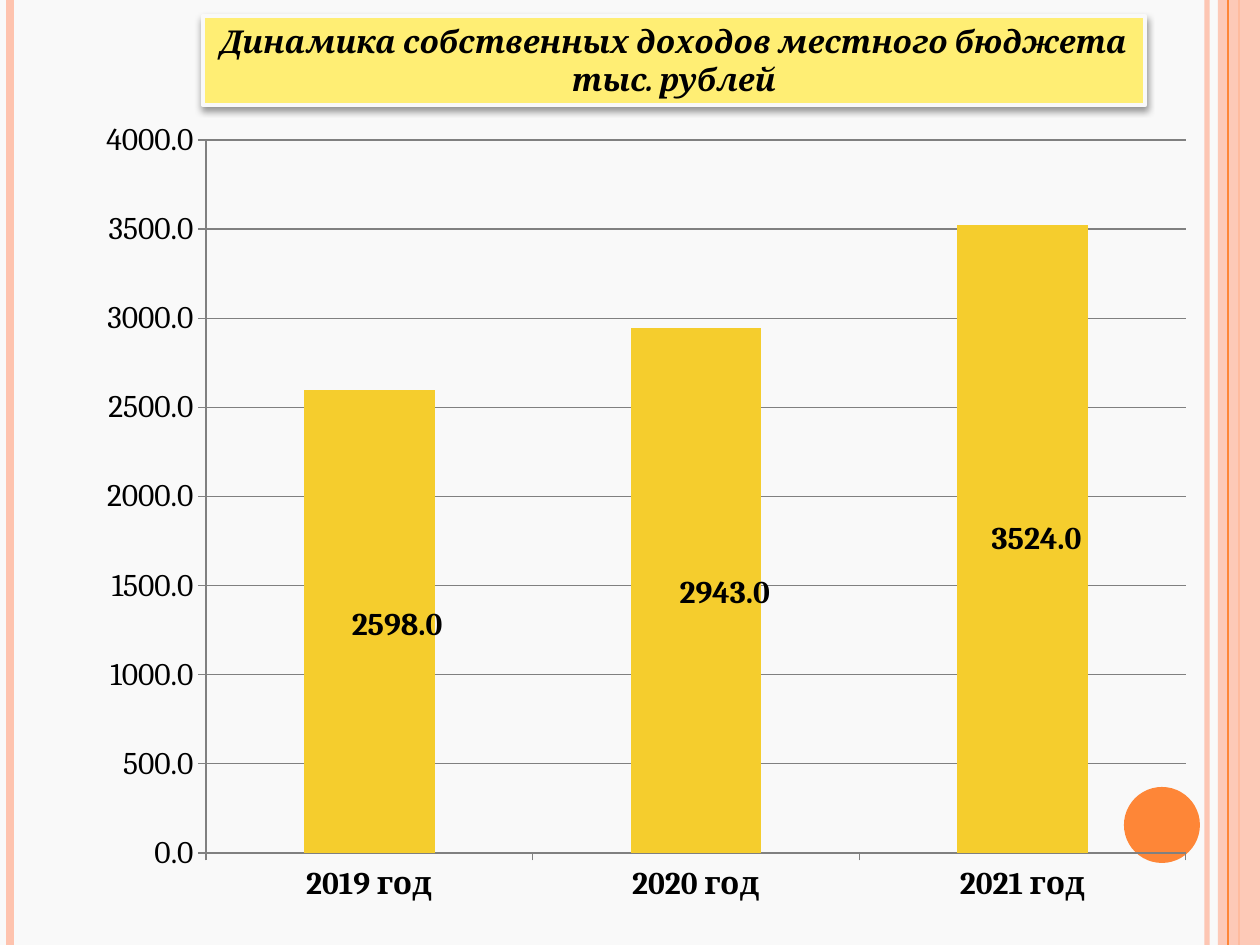
from pptx import Presentation
from pptx.chart.data import CategoryChartData
from pptx.dml.color import RGBColor
from pptx.enum.chart import XL_CHART_TYPE, XL_LABEL_POSITION, XL_TICK_MARK
from pptx.enum.shapes import MSO_CONNECTOR, MSO_SHAPE
from pptx.enum.text import MSO_ANCHOR, MSO_AUTO_SIZE, PP_ALIGN
from pptx.oxml import parse_xml
from pptx.oxml.ns import nsdecls, qn
from pptx.util import Pt
from lxml.etree import SubElement

THEME = dict(back="F9F9F9", pale="FEC3AE", orange="FE8637", title="FFEE74",
             bar="F5CD2D", grid="808080", ink="000000", font="Cambria", size=18)
TITLE = "Динамика собственных доходов местного бюджета тыс. рублей"
DATA = [("2019 год", 2598, (28, 4)), ("2020 год", 2943, (29, 2)),
        ("2021 год", 3524, (14, 0))]
WIDE, HIGH = 1260, 945
RULES = [(1207, "pale", 3, 93), (10, "pale", 4.5, 100), (1239, "orange", 1.5, 100)]
EDGE = (1228, "orange", 0.75, 100)
CHART = (84, 106, 1124, 814)
PLOT = (206, 140, 980, 713)


def px(n):
    return round(n * 914400 / 126)


def color(name):
    return RGBColor.from_string(THEME[name])


def fade(fill, share):
    tint = fill.find(".//" + qn("a:srgbClr"))
    SubElement(tint, qn("a:alpha")).set("val", str(share * 1000))


def rule(slide, x, tone, width, share):
    line = slide.shapes.add_connector(MSO_CONNECTOR.STRAIGHT, px(x), 0, px(x), px(HIGH))
    line.line.color.rgb = color(tone)
    line.line.width = Pt(width)
    props = line._element.spPr
    if share < 100:
        fade(props, share)
    SubElement(props, qn("a:effectLst"))


def block(slide, kind, box, tone):
    shape = slide.shapes.add_shape(kind, *map(px, box))
    shape.shadow.inherit = False
    shape.fill.solid()
    shape.fill.fore_color.rgb = color(tone)
    shape.line.fill.background()
    return shape


def style(font, bold=False):
    font.name = THEME["font"]
    font.size = Pt(THEME["size"])
    font.bold = bold
    font.color.rgb = color("ink")


def layout(inner="", **parts):
    tags = "".join(f'<c:{k} val="{v:.4f}"/>' for k, v in parts.items())
    return parse_xml(f'<c:layout {nsdecls("c")}><c:manualLayout>{inner}{tags}'
                     '</c:manualLayout></c:layout>')


def add_title(slide):
    box = block(slide, MSO_SHAPE.RECTANGLE, (203, 16, 942, 89), "title")
    box.line.color.rgb = color("back")
    box.line.width = Pt(2.75)
    glow = SubElement(box._element.spPr.find(qn("a:effectLst")), qn("a:outerShdw"),
                      blurRad=str(Pt(4)), dist=str(Pt(2)), dir="5400000", rotWithShape="0")
    tint = SubElement(glow, qn("a:srgbClr"), val=THEME["ink"])
    SubElement(tint, qn("a:alpha"), val="40000")
    frame = box.text_frame
    frame.text = TITLE
    frame.word_wrap = True
    frame.auto_size = MSO_AUTO_SIZE.SHAPE_TO_FIT_TEXT
    frame.vertical_anchor = MSO_ANCHOR.TOP
    para = frame.paragraphs[0]
    para.alignment = PP_ALIGN.CENTER
    style(para.runs[0].font, True)
    para.runs[0].font.italic = True


def add_bars(slide):
    data = CategoryChartData(number_format="0.0")
    data.categories = [name for name, _, _ in DATA]
    data.add_series("Series 1", [value for _, value, _ in DATA])
    chart = slide.shapes.add_chart(XL_CHART_TYPE.COLUMN_STACKED, *map(px, CHART), data).chart
    style(chart.font)
    chart.has_legend = False
    chart.has_title = False
    left, top, wide, high = CHART
    area = chart._chartSpace.chart.plotArea
    for old in area.findall(qn("c:layout")):
        area.remove(old)
    modes = '<c:layoutTarget val="inner"/><c:xMode val="edge"/><c:yMode val="edge"/>'
    area.insert(0, layout(modes, x=(PLOT[0] - left) / wide, y=(PLOT[1] - top) / high,
                          w=PLOT[2] / wide, h=PLOT[3] / high))
    for axis, bold in ((chart.category_axis, True), (chart.value_axis, False)):
        axis.major_tick_mark = XL_TICK_MARK.OUTSIDE
        axis.minor_tick_mark = XL_TICK_MARK.NONE
        axis.format.line.color.rgb = color("grid")
        style(axis.tick_labels.font, bold)
    scale = chart.value_axis
    scale.minimum_scale, scale.maximum_scale, scale.major_unit = 0, 4000, 500
    scale.tick_labels.number_format = "0.0"
    scale.tick_labels.number_format_is_linked = False
    scale.has_major_gridlines = True
    scale.major_gridlines.format.line.color.rgb = color("grid")
    plot = chart.plots[0]
    plot.gap_width, plot.overlap, plot.vary_by_categories = 150, 100, False
    bars = plot.series[0]
    bars.format.fill.solid()
    bars.format.fill.fore_color.rgb = color("bar")
    labels = bars.data_labels
    labels.show_value = True
    labels.number_format = "0.0"
    labels.number_format_is_linked = False
    style(labels.font, True)
    for i, (_, _, (dx, dy)) in enumerate(DATA):
        label = bars.points[i].data_label
        label.position = XL_LABEL_POSITION.CENTER
        style(label.font, True)
        node = labels._element.findall(qn("c:dLbl"))[i]
        node.insert(1, layout(x=dx / wide, y=dy / high))
        node.insert(2, parse_xml(f'<c:numFmt {nsdecls("c")} formatCode="0.0" sourceLinked="0"/>'))


def main():
    deck = Presentation()
    deck.slide_width, deck.slide_height = px(WIDE), px(HIGH)
    slide = deck.slides.add_slide(deck.slide_layouts[6])
    slide.background.fill.solid()
    slide.background.fill.fore_color.rgb = color("back")
    for item in RULES:
        rule(slide, *item)
    band = block(slide, MSO_SHAPE.RECTANGLE, (1218, 0, 42, HIGH), "pale")
    fade(band._element.spPr, 87)
    rule(slide, *EDGE)
    block(slide, MSO_SHAPE.OVAL, (1124, 787, 76, 76), "orange")
    add_title(slide)
    add_bars(slide)
    deck.save("out.pptx")


if __name__ == "__main__":
    main()
